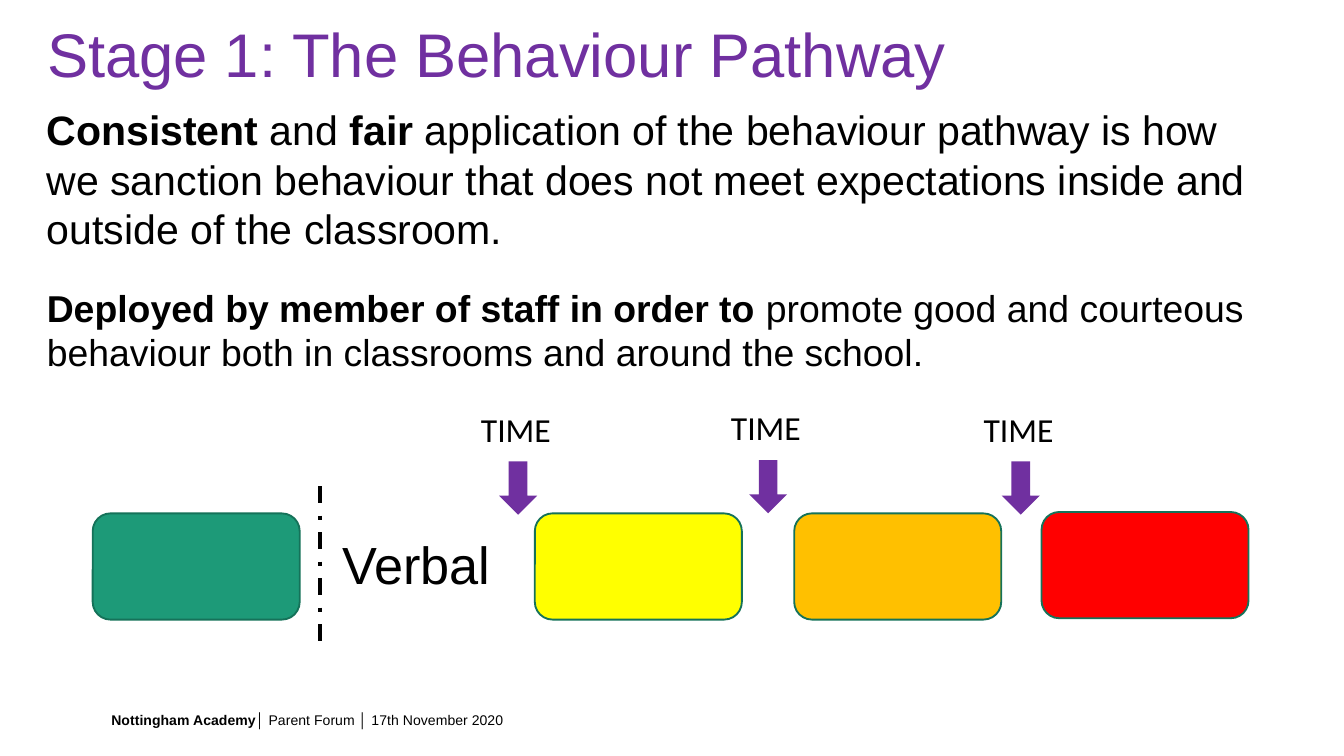
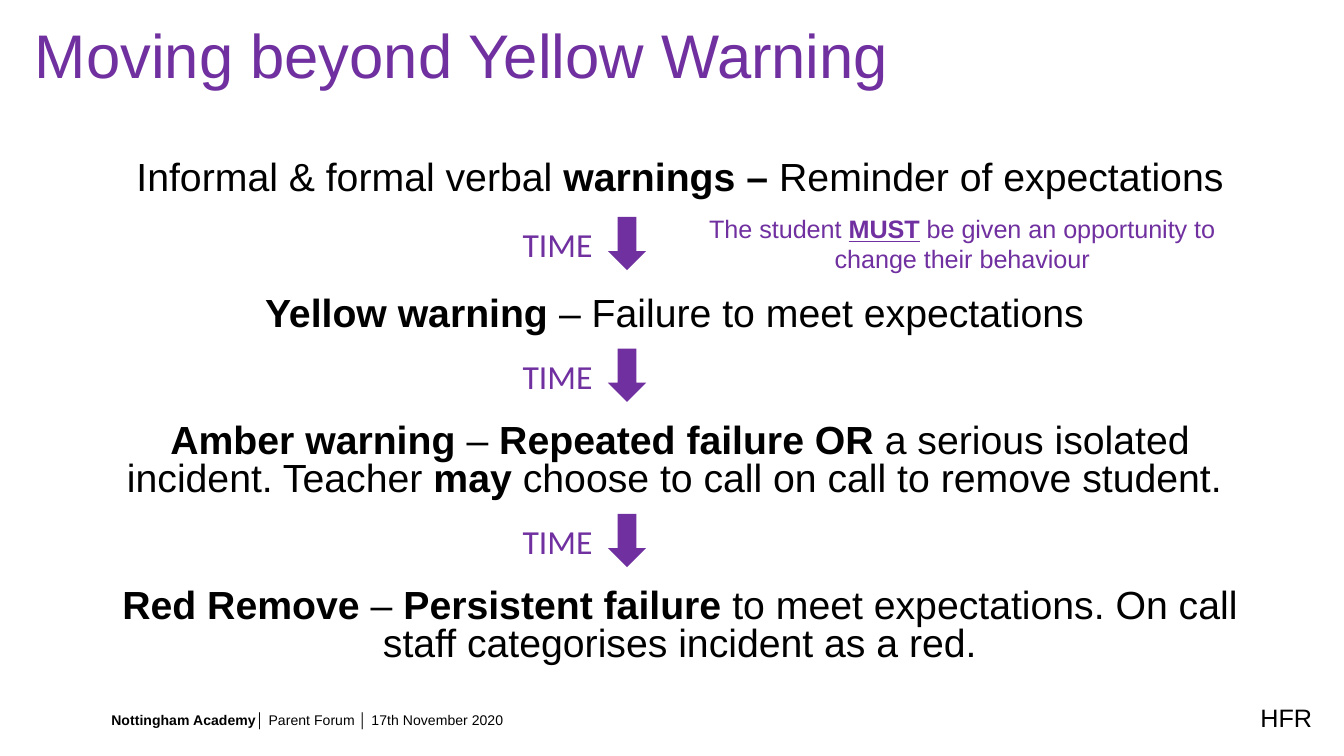
from lxml.etree import SubElement
from pptx import Presentation
from pptx.dml.color import RGBColor
from pptx.enum.dml import MSO_LINE
from pptx.enum.shapes import MSO_CONNECTOR, MSO_SHAPE
from pptx.enum.text import MSO_ANCHOR, MSO_AUTO_SIZE, PP_ALIGN
from pptx.oxml.ns import qn
from pptx.util import Pt

PX = 9144
COLOURS = {
    "purple": "7030A0", "black": "000000", "outline": "157259",
    "green": "1D9A78", "yellow": "FFFF00", "amber": "FFC000", "red": "FF0000",
}
FOOTER = "*Nottingham Academy│ *Parent Forum │ 17th November 2020"
ARROW_SIZE = (25, 38)
TIME_SIZE = (75, 40)


def write(box, at, texts, size, colour="black", font="Arial",
          align=PP_ALIGN.LEFT, anchor=MSO_ANCHOR.TOP, line_spacing=None):
    box.left, box.top, box.width, box.height = [length * PX for length in at]
    frame = box.text_frame
    frame.word_wrap = True
    frame.auto_size = MSO_AUTO_SIZE.NONE
    frame.vertical_anchor = anchor
    for number, text in enumerate(texts):
        para = frame.add_paragraph() if number else frame.paragraphs[0]
        para.alignment = align
        para.line_spacing = line_spacing
        for part, words in enumerate(text.split("*")):
            if words:
                span = para.add_run()
                span.text = words
                span.font.name = font
                span.font.size = Pt(size)
                span.font.bold = part % 2 == 1
                span.font.color.rgb = RGBColor.from_string(COLOURS[colour])
    return frame


def add_block(page, kind, at, fill, outline):
    block = page.shapes.add_shape(kind, *[length * PX for length in at])
    block.shadow.inherit = False
    block.fill.solid()
    block.fill.fore_color.rgb = RGBColor.from_string(COLOURS[fill])
    block.line.color.rgb = RGBColor.from_string(COLOURS[outline])
    block.line.width = Pt(1)
    SubElement(block._element.spPr.find(qn("a:ln")), qn("a:miter"), lim="800000")


deck = Presentation()
deck.slide_width = 1000 * PX
deck.slide_height = deck.slide_width * 9 // 16

pages = []
for title, left, top in [("Stage 1: The Behaviour Pathway", 25, -12),
                         ("Moving beyond Yellow Warning", 16, -11)]:
    page = deck.slides.add_slide(deck.slide_layouts[5])
    write(page.shapes.title, (left, top, 862, 109), [title], 33, "purple",
          anchor=MSO_ANCHOR.MIDDLE, line_spacing=0.9)
    write(page.shapes.add_textbox(0, 0, 0, 0), (73, 521, 525, 29), [FOOTER], 7.5,
          anchor=MSO_ANCHOR.MIDDLE)
    pages.append(page)
pathway, beyond = pages

for at, text, size in [
    ((25, 73, 914, 121),
     "*Consistent* and *fair* application of the behaviour pathway is how we sanction "
     "behaviour that does not meet expectations inside and outside of the classroom.", 22),
    ((25, 207, 914, 77),
     "*Deployed by member of staff in order to *promote good and courteous behaviour "
     "both in classrooms and around the school.", 20),
    ((245, 391, 154, 57), "Verbal", 28),
]:
    write(pathway.shapes.add_textbox(0, 0, 0, 0), at, [text], size)

for left, top, colour in [(69, 382, "green"), (398, 382, "yellow"),
                          (591, 382, "amber"), (775, 381, "red")]:
    add_block(pathway, MSO_SHAPE.ROUNDED_RECTANGLE, (left, top, 154, 79), colour, "outline")

for left, top in [(348, 299), (534, 298), (722, 299)]:
    write(pathway.shapes.add_textbox(0, 0, 0, 0), (left, top, *TIME_SIZE), ["TIME"], 18,
          font="Calibri")
    add_block(pathway, MSO_SHAPE.DOWN_ARROW, (left + 25, top + 45, *ARROW_SIZE),
              "purple", "purple")

divider = pathway.shapes.add_connector(
    MSO_CONNECTOR.STRAIGHT, 238 * PX, 362 * PX, 238 * PX, 482 * PX)
divider.line.color.rgb = RGBColor.from_string(COLOURS["black"])
divider.line.width = Pt(2.25)
divider.line.dash_style = MSO_LINE.DASH_DOT
SubElement(divider._element.spPr, qn("a:effectLst"))

steps = write(beyond.shapes.add_textbox(0, 0, 0, 0), (75, 115, 862, 413), [
    "Informal & formal verbal *warnings – *Reminder of expectations",
    "*Yellow warning *– Failure to meet expectations ",
    "*Amber warning *– *Repeated failure OR *a serious isolated incident. "
    "Teacher *may* choose to call on call to remove student. ",
    "*Red Remove *– *Persistent failure *to meet expectations. "
    "On call staff categorises incident as a red.",
], 21, align=PP_ALIGN.CENTER, line_spacing=0.8)
for para, gap in zip(steps.paragraphs[1:], [53, 48, 48]):
    para.space_before = Pt(gap)

for top in [162, 260, 383]:
    write(beyond.shapes.add_textbox(0, 0, 0, 0), (379, top, *TIME_SIZE), ["TIME"], 18,
          "purple", "Calibri")
    add_block(beyond, MSO_SHAPE.DOWN_ARROW, (454, top, *ARROW_SIZE), "purple", "purple")

reminder = write(beyond.shapes.add_textbox(0, 0, 0, 0), (494, 154, 444, 56),
                 ["The student *MUST* be given an opportunity to change their behaviour"],
                 13.5, "purple", align=PP_ALIGN.CENTER)
reminder.paragraphs[0].runs[1].font.underline = True
write(beyond.shapes.add_textbox(0, 0, 0, 0), (928, 518, 72, 33), ["HFR"], 13.5)

deck.save("out.pptx")
